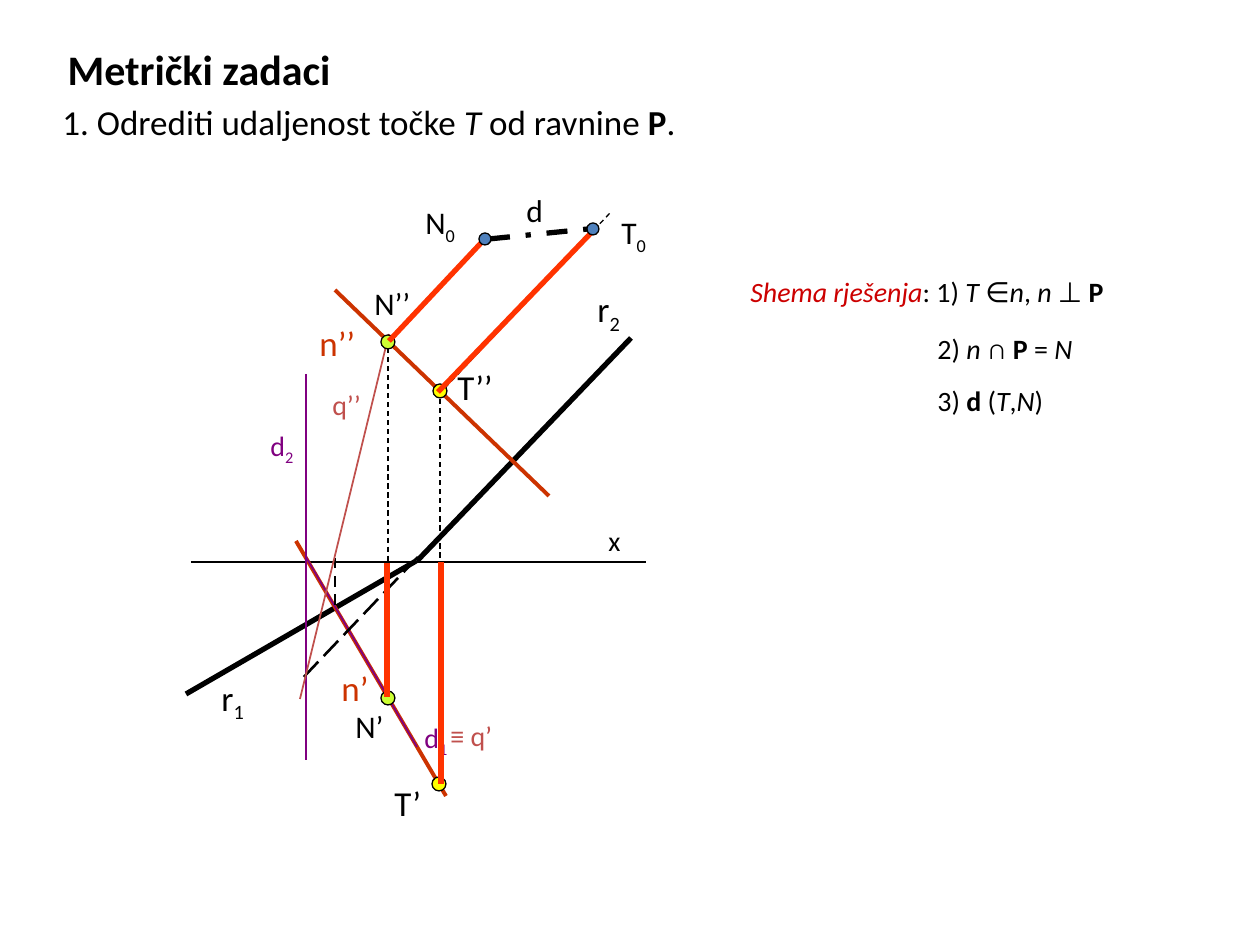
from lxml.etree import SubElement
from pptx import Presentation
from pptx.dml.color import RGBColor
from pptx.enum.dml import MSO_LINE_DASH_STYLE as DASH
from pptx.enum.shapes import MSO_CONNECTOR, MSO_SHAPE
from pptx.enum.text import MSO_ANCHOR, MSO_AUTO_SIZE, PP_ALIGN
from pptx.oxml.ns import qn
from pptx.util import Emu, Pt

PX = 914400 / 126
BLACK, ORANGE, RED, PURPLE, ROSE = "000000", "CC3300", "FF3300", "800080", "C0504D"
YELLOW, LIME, BLUE, CRIMSON = "FFFF00", "CCFF33", "4F81BD", "CC0000"


def px(*lengths):
    """Turn pixel lengths into EMU."""
    return [Emu(round(length * PX)) for length in lengths]


def rgb(color):
    return RGBColor.from_string(color)


presentation = Presentation()
presentation.slide_width, presentation.slide_height = px(1260, 945)
slide = presentation.slides.add_slide(presentation.slide_layouts[5])
shapes = slide.shapes

title = shapes.title
title.left, title.top, title.width, title.height = px(55, 37, 318, 59)
title.text_frame.text = "Metrički zadaci"
title.text_frame.auto_size = MSO_AUTO_SIZE.NONE
title.text_frame.vertical_anchor = MSO_ANCHOR.TOP
paragraph = title.text_frame.paragraphs[0]
paragraph.alignment = PP_ALIGN.LEFT
paragraph.font.name, paragraph.font.size, paragraph.font.bold = "Calibri", Pt(24), True
paragraph.font.color.rgb = rgb(BLACK)

# Each text: left, top, width, size, colour, runs of (text, style);
# a style is "i" italic, "b" bold, "sub" subscript or a colour with italic
texts = [
    (50, 94, 660, 20, BLACK, [("1. Odrediti udaljenost točke ", ""), ("T", "i"),
                              (" od ravnine ", ""), ("P", "b"), (".", "")]),
    (738, 268, 423, 16, BLACK, [("Shema rješenja", CRIMSON), (": 1) ", ""), ("T ", "i"),
                                ("∈", ""), ("n", "i"), (", ", ""), ("n", "i"),
                                (" ⊥ ", ""), ("P", "b")]),
    (925, 325, 257, 16, BLACK, [("2) ", ""), ("n ", "i"), ("∩ ", ""), ("P", "b"),
                                (" = ", ""), ("N", "i")]),
    (925, 377, 244, 16, BLACK, [("3) ", ""), ("d", "b"), (" (", ""), ("T", "i"),
                                (",", ""), ("N", "i"), (")", "")]),
    (585, 281, 76, 20, BLACK, [("r", ""), ("2", "sub")]),
    (209, 670, 72, 20, BLACK, [("r", ""), ("1", "sub")]),
    (596, 517, 55, 16, BLACK, [("x", "")]),
    (445, 359, 73, 20, BLACK, [("T’’", "")]),
    (382, 775, 63, 20, BLACK, [("T’", "")]),
    (329, 660, 67, 20, ORANGE, [("n’", "")]),
    (307, 315, 88, 20, ORANGE, [("n’’", "")]),
    (412, 714, 53, 16, PURPLE, [("d", ""), ("1", "sub")]),
    (258, 422, 62, 16, PURPLE, [("d", ""), ("2", "sub")]),
    (438, 712, 91, 16, ROSE, [("≡ q’", "")]),
    (320, 381, 73, 16, ROSE, [("q’’", "")]),
    (362, 278, 73, 18, BLACK, [("N’’", "")]),
    (343, 701, 68, 18, BLACK, [("N’", "")]),
    (609, 207, 58, 18, BLACK, [("T", ""), ("0", "sub")]),
    (413, 197, 66, 18, BLACK, [("N", ""), ("0", "sub")]),
    (514, 185, 47, 18, BLACK, [("d", "")]),
]
for left, top, width, size, color, runs in texts:
    frame = shapes.add_textbox(*px(left, top, width, size * 2 + 14)).text_frame
    frame.word_wrap = True
    paragraph = frame.paragraphs[0]
    paragraph.font.name, paragraph.font.size = "Calibri", Pt(size)
    paragraph.font.color.rgb = rgb(color)
    for text, style in runs:
        run = paragraph.add_run()
        run.text = text
        if style == "b":
            run.font.bold = True
        elif style == "sub":
            run.font._element.set("baseline", "-25000")
        elif style:
            run.font.italic = True
            if style != "i":
                run.font.color.rgb = rgb(style)

# Lines: x1, y1, x2, y2, colour, width in points, dash
projection_lines = [
    (191, 562, 646, 562, BLACK, 0.75, None),            # x axis
    (631, 338, 417, 561, BLACK, 3, None),               # r2
    (416, 561, 186, 694, BLACK, 3, None),               # r1
    (440, 399, 440, 782, BLACK, 0.75, DASH.DASH),       # T’’ to T’
    (335, 290, 549, 496, ORANGE, 2.25, None),           # n’’
    (446, 796, 296, 541, ORANGE, 2.25, None),           # n’
    (306, 374, 306, 760, PURPLE, 1.5, None),            # d2
    (306, 557, 417, 747, PURPLE, 1, None),              # d1
    (418, 557, 299, 682, BLACK, 1.5, DASH.LONG_DASH),
    (335, 605, 335, 556, BLACK, 1.5, DASH.DASH),
    (300, 699, 389, 334, ROSE, 1, None),                # q’’
    (388, 348, 388, 692, BLACK, 0.75, DASH.DASH),       # N’’ to N’
]
distance_lines = [
    (392, 336, 485, 238, BLACK, 0.75, DASH.DASH),
    (445, 388, 611, 212, BLACK, 0.75, DASH.DASH),
    (441, 562, 441, 784, RED, 3, None),
    (592, 232, 438, 392, RED, 3, None),
    (387, 563, 387, 697, RED, 3, None),
    (481, 243, 389, 341, RED, 3, None),
    (489, 239, 588, 229, BLACK, 3, DASH.DASH_DOT),      # d
]
# Points: centre x, centre y, diameter, colour
projection_points = [(440, 391, 14, YELLOW), (439, 784, 14, YELLOW),
                     (388, 342, 14, LIME), (388, 698, 14, LIME)]
rotated_points = [(593, 229, 12, BLUE), (485, 239, 12, BLUE)]

for lines, points in [(projection_lines, projection_points),
                      (distance_lines, rotated_points)]:
    for x1, y1, x2, y2, color, width, dash in lines:
        line = shapes.add_connector(MSO_CONNECTOR.STRAIGHT, *px(x1, y1, x2, y2))
        line.line.color.rgb = rgb(color)
        line.line.width = Pt(width)
        if dash:
            line.line.dash_style = dash
        SubElement(line._element.spPr, qn("a:effectLst"))
    for x, y, size, color in points:
        point = shapes.add_shape(MSO_SHAPE.OVAL, *px(x - size / 2, y - size / 2, size, size))
        point.shadow.inherit = False
        point.fill.solid()
        point.fill.fore_color.rgb = rgb(color)
        point.line.color.rgb = rgb(BLACK)
        point.line.width = Pt(0.75)

presentation.save("out.pptx")
